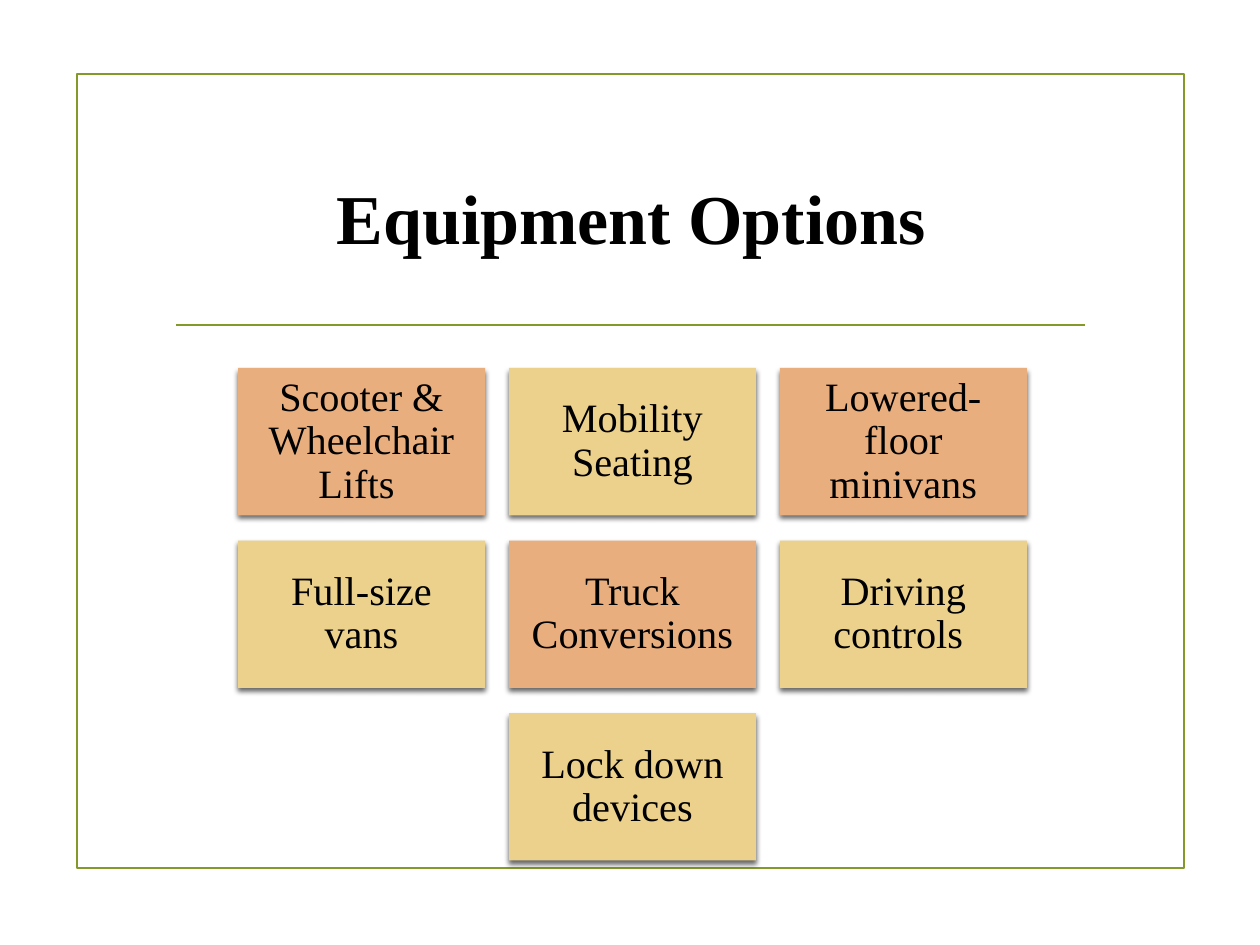
from dataclasses import dataclass

from lxml.etree import SubElement
from pptx import Presentation
from pptx.dml.color import RGBColor
from pptx.enum.shapes import MSO_CONNECTOR as Connector, MSO_SHAPE as Shape
from pptx.enum.text import MSO_ANCHOR as Anchor, PP_ALIGN as Align
from pptx.oxml.ns import qn
from pptx.util import Inches, Pt


@dataclass(frozen=True)
class Theme:
    font: str = "Times New Roman"
    text: str = "000000"
    accent: str = "83992A"
    tile_fills: tuple = ("E8AE7E", "EBD18C")
    shadow: str = "000000"
    title_size: int = 40
    tile_size: int = 23
    line_width: float = 1.25


THEME = Theme()
OPTIONS = [
    "Scooter & Wheelchair Lifts ",
    "Mobility Seating",
    "Lowered-floor minivans",
    "Full-size vans",
    "Truck Conversions",
    "Driving controls ",
    "Lock down devices",
]
COLUMNS = 3
GRID_LEFT, GRID_TOP = 1.89, 2.92
TILE_WIDTH, TILE_HEIGHT = 1.96, 1.17
STEP_X, STEP_Y = 2.15, 1.37


def color(value):
    return RGBColor.from_string(value)


def style_line(line):
    line.color.rgb = color(THEME.accent)
    line.width = Pt(THEME.line_width)


def add_frame(slide, left, top, width, height):
    frame = slide.shapes.add_shape(
        Shape.RECTANGLE, Inches(left), Inches(top), Inches(width), Inches(height)
    )
    frame.shadow.inherit = False
    frame.fill.background()
    style_line(frame.line)


def add_rule(slide, left, right, y):
    rule = slide.shapes.add_connector(
        Connector.STRAIGHT, Inches(left), Inches(y), Inches(right), Inches(y)
    )
    style_line(rule.line)
    SubElement(rule._element.spPr, qn("a:effectLst"))


def write_text(shape, text, size, bold=False, spacing=1.0):
    frame = shape.text_frame
    frame.word_wrap = True
    frame.vertical_anchor = Anchor.MIDDLE
    paragraph = frame.paragraphs[0]
    paragraph.alignment = Align.CENTER
    paragraph.line_spacing = spacing
    run = paragraph.add_run()
    run.text = text
    run.font.name = THEME.font
    run.font.size = Pt(size)
    run.font.bold = bold
    run.font.color.rgb = color(THEME.text)


def add_title(slide, text, left, top, width, height):
    title = slide.shapes.add_textbox(
        Inches(left), Inches(top), Inches(width), Inches(height)
    )
    write_text(title, text, THEME.title_size, bold=True)


def add_shadow(shape):
    shape.shadow.inherit = False
    effects = shape._element.spPr.find(qn("a:effectLst"))
    shadow = SubElement(
        effects,
        qn("a:outerShdw"),
        blurRad=str(Pt(3)),
        dist=str(Pt(2)),
        dir="5400000",
        algn="ctr",
        rotWithShape="0",
    )
    shade = SubElement(shadow, qn("a:srgbClr"), val=THEME.shadow)
    SubElement(shade, qn("a:alpha"), val="60000")


def add_tile(slide, text, left, top, fill):
    tile = slide.shapes.add_shape(
        Shape.RECTANGLE,
        Inches(left),
        Inches(top),
        Inches(TILE_WIDTH),
        Inches(TILE_HEIGHT),
    )
    tile.fill.solid()
    tile.fill.fore_color.rgb = color(fill)
    tile.line.fill.background()
    add_shadow(tile)
    frame = tile.text_frame
    frame.margin_left = frame.margin_right = Inches(0.1)
    frame.margin_top = frame.margin_bottom = Inches(0.1)
    write_text(tile, text, THEME.tile_size, spacing=0.9)


def add_option_grid(slide, options):
    for start in range(0, len(options), COLUMNS):
        row = options[start:start + COLUMNS]
        left = GRID_LEFT + (COLUMNS - len(row)) * STEP_X / 2
        top = GRID_TOP + start // COLUMNS * STEP_Y
        for column, text in enumerate(row):
            fill = THEME.tile_fills[(start + column) % 2 if len(row) > 1 else 1]
            add_tile(slide, text, left + column * STEP_X, top, fill)


def main():
    presentation = Presentation()
    presentation.slide_width = Inches(10)
    presentation.slide_height = Inches(7.5)
    slide = presentation.slides.add_slide(presentation.slide_layouts[6])
    add_frame(slide, 0.61, 0.59, 8.79, 6.3)
    add_rule(slide, 1.4, 8.61, 2.58)
    add_title(slide, "Equipment Options", 1.29, 1, 7.44, 1.43)
    add_option_grid(slide, OPTIONS)
    presentation.save("out.pptx")


if __name__ == "__main__":
    main()
